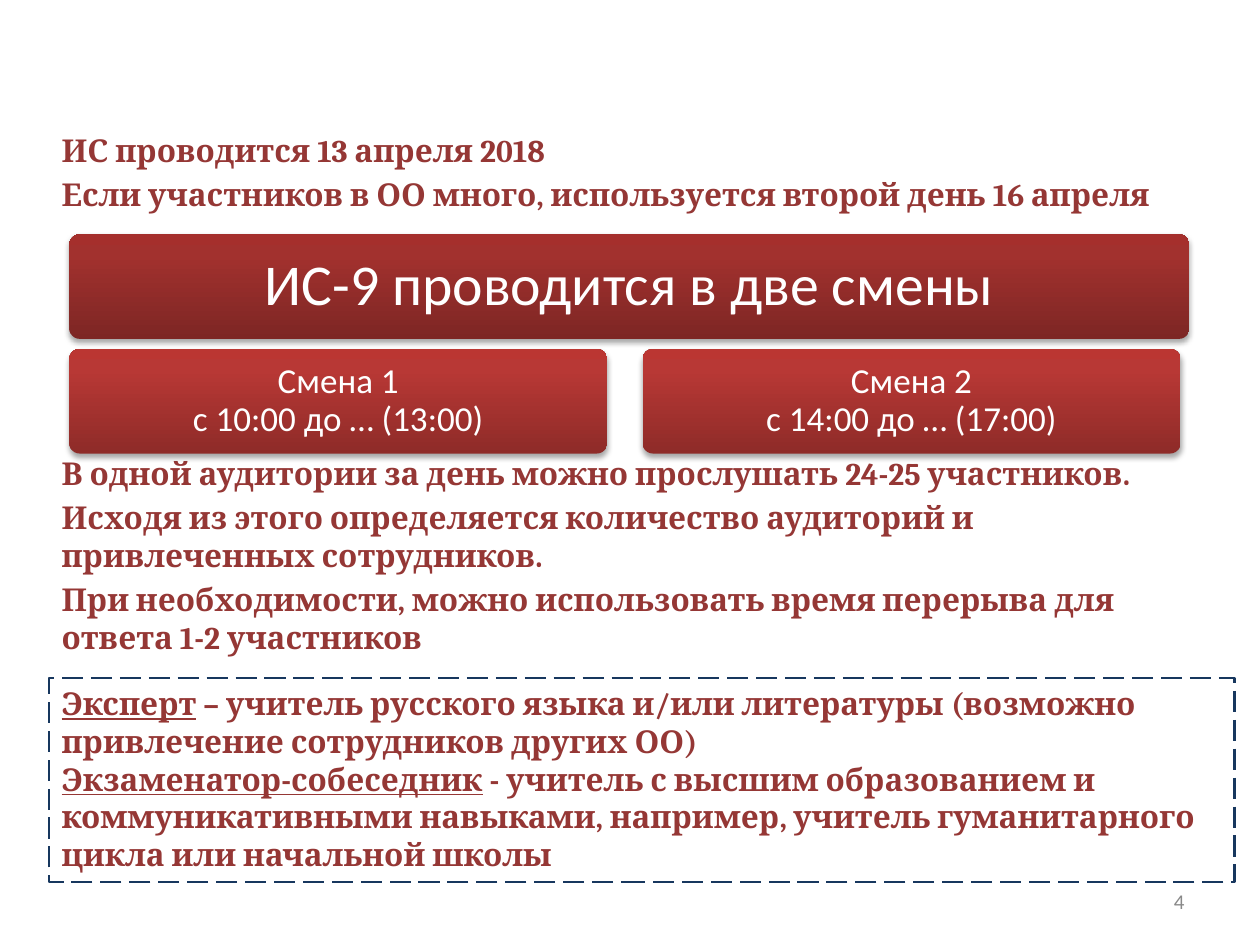
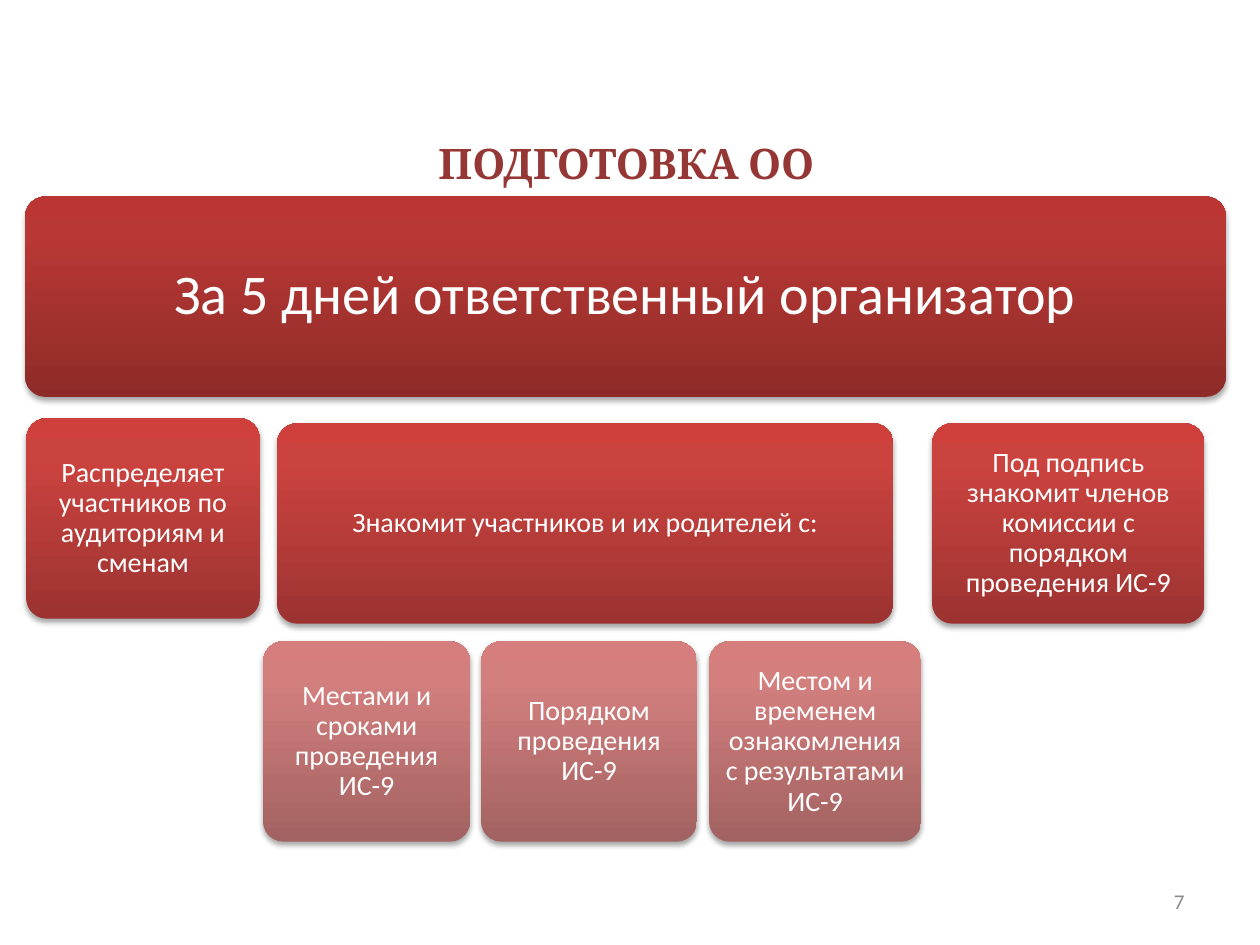
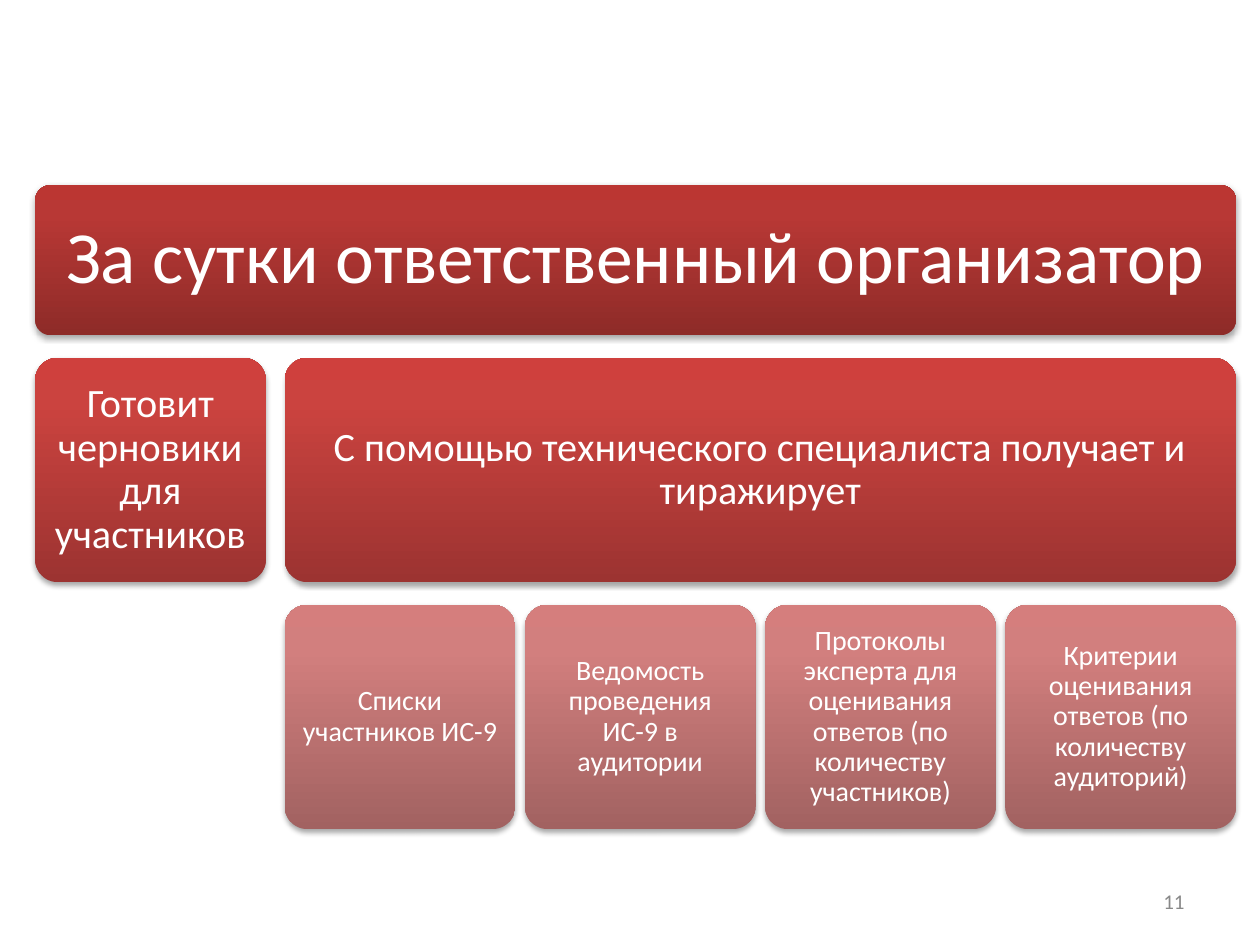
from lxml import etree
from pptx import Presentation
from pptx.dml.color import RGBColor
from pptx.enum.dml import MSO_LINE
from pptx.enum.shapes import MSO_SHAPE
from pptx.enum.text import MSO_ANCHOR, PP_ALIGN
from pptx.oxml import parse_xml
from pptx.oxml.ns import nsdecls
from pptx.util import Inches, Pt

COLORS = {
    "heading": "953735",
    "number": "898989",
    "white": "FFFFFF",
    "frame": "17375E",
}
# Gradient stops from bottom to top of a block: 0, 80 and 100 %
GRADIENTS = {
    "deep": ("7D2624", "A2312E", "A52F2C"),
    "main": ("8E2B28", "B83835", "BB3632"),
    "second": ("9C3331", "CB433F", "CF403D"),
    "pale": ("A26261", "D27F7E", "D57E7D"),
}
HEADING_FONT = "Cambria"
BODY_FONT = "Calibri"


def style(paragraph, font_name, size, color, bold=False, alignment=None):
    paragraph.alignment = alignment
    font = paragraph.font
    font.name = font_name
    font.size = Pt(size)
    font.bold = bold
    font.color.rgb = RGBColor.from_string(COLORS[color])


def add_block(slide, text, left, top, width, height, gradient, size):
    """Rounded block with a vertical gradient, a soft shadow and centred text."""
    shape = slide.shapes.add_shape(
        MSO_SHAPE.ROUNDED_RECTANGLE,
        Inches(left), Inches(top), Inches(width), Inches(height))
    shape.adjustments[0] = 0.1
    shape.line.fill.background()
    stops = "".join(
        f'<a:gs pos="{position}000"><a:srgbClr val="{color}"/></a:gs>'
        for position, color in zip((0, 80, 100), GRADIENTS[gradient]))
    properties = shape._element.spPr
    properties.find("{*}prstGeom").addnext(parse_xml(
        f'<a:gradFill {nsdecls("a")} rotWithShape="1"><a:gsLst>{stops}</a:gsLst>'
        '<a:lin ang="16200000" scaled="0"/></a:gradFill>'))
    shape.shadow.inherit = False
    properties.find("{*}effectLst").append(parse_xml(
        f'<a:outerShdw {nsdecls("a")} blurRad="40000" dist="23000" dir="5400000" '
        'rotWithShape="0"><a:srgbClr val="000000"><a:alpha val="35000"/>'
        '</a:srgbClr></a:outerShdw>'))

    frame = shape.text_frame
    frame.word_wrap = True
    frame.vertical_anchor = MSO_ANCHOR.MIDDLE
    # The inset grows with the text size
    frame.margin_left = frame.margin_right = Pt(size * 0.3)
    frame.margin_top = frame.margin_bottom = Pt(size * 0.3)
    paragraph = frame.paragraphs[0]
    paragraph.text = text
    paragraph.line_spacing = 0.9
    style(paragraph, BODY_FONT, size, "white", alignment=PP_ALIGN.CENTER)


presentation = Presentation()
presentation.slide_width = Inches(10)
presentation.slide_height = Inches(7.5)
title_only, blank = presentation.slide_layouts[5], presentation.slide_layouts[6]

# Slides with their numbers
slides = []
for number, layout in ((4, blank), (7, title_only), (11, blank)):
    slide = presentation.slides.add_slide(layout)
    number_box = slide.shapes.add_textbox(
        Inches(7.17), Inches(6.95), Inches(2.33), Inches(0.4))
    number_box.text_frame.word_wrap = True
    number_box.text_frame.vertical_anchor = MSO_ANCHOR.MIDDLE
    paragraph = number_box.text_frame.paragraphs[0]
    paragraph.text = str(number)
    style(paragraph, BODY_FONT, 12, "number", alignment=PP_ALIGN.RIGHT)
    slides.append(slide)
shifts_slide, preparation_slide, day_before_slide = slides

# Slide 1: dates and rooms, with room left between them for the shifts
schedule_box = shifts_slide.shapes.add_textbox(
    Inches(0.39), Inches(0.99), Inches(9.41), Inches(4.33))
schedule_frame = schedule_box.text_frame
schedule_frame.word_wrap = True
schedule = [
    ("ИС проводится 13 апреля 2018", 0),
    ("Если участников в ОО много, используется второй день 16 апреля", 3.6),
    ("В одной аудитории за день можно прослушать 24-25 участников.", 138),
    ("Исходя из этого определяется количество аудиторий и привлеченных сотрудников.", 3.6),
    ("При необходимости, можно использовать время перерыва для ответа 1-2 участников", 3.6),
]
for index, (text, space_before) in enumerate(schedule):
    paragraph = schedule_frame.add_paragraph() if index else schedule_frame.paragraphs[0]
    paragraph.text = text
    paragraph.space_before = Pt(space_before)
    style(paragraph, HEADING_FONT, 18, "heading", bold=True)

# Slide 1: shifts
add_block(shifts_slide, "ИС-9 проводится в две смены", 0.55, 1.86, 8.89, 0.83, "deep", 33)
for left, text in ((0.55, "Смена 1\vс 10:00 до … (13:00)"),
                   (5.1, "Смена 2\vс 14:00 до … (17:00)")):
    add_block(shifts_slide, text, left, 2.77, 4.27, 0.83, "main", 20)

# Slide 1: framed roles
roles_frame = shifts_slide.shapes.add_shape(
    MSO_SHAPE.RECTANGLE, Inches(0.39), Inches(5.38), Inches(9.41), Inches(1.62))
roles_frame.shadow.inherit = False
roles_frame.fill.solid()
roles_frame.fill.fore_color.rgb = RGBColor.from_string(COLORS["white"])
roles_frame.line.color.rgb = RGBColor.from_string(COLORS["frame"])
roles_frame.line.width = Pt(1.5)
roles_frame.line.dash_style = MSO_LINE.LONG_DASH
roles_text = roles_frame.text_frame
roles_text.word_wrap = True
roles_text.vertical_anchor = MSO_ANCHOR.TOP
roles = [
    ("Эксперт", " – учитель русского языка и/или литературы (возможно "
     "привлечение сотрудников других ОО)"),
    ("Экзаменатор-собеседник", " - учитель с высшим образованием и коммуникативными "
     "навыками, например, учитель гуманитарного цикла или начальной школы"),
]
for index, (role, description) in enumerate(roles):
    paragraph = roles_text.add_paragraph() if index else roles_text.paragraphs[0]
    style(paragraph, HEADING_FONT, 18, "heading", bold=True, alignment=PP_ALIGN.LEFT)
    for text, underlined in ((role, True), (description, False)):
        run = paragraph.add_run()
        run.text = text
        run.font.underline = underlined
        run.font.color.rgb = RGBColor.from_string(COLORS["heading"])

# Slide 2: title
title = preparation_slide.shapes.title
title.left, title.top = Inches(0.47), Inches(1.02)
title.width, title.height = Inches(9), Inches(0.55)
title.text_frame.vertical_anchor = MSO_ANCHOR.MIDDLE
paragraph = title.text_frame.paragraphs[0]
paragraph.text = "ПОДГОТОВКА ОО"
style(paragraph, HEADING_FONT, 24, "heading", bold=True, alignment=PP_ALIGN.CENTER)

# Slide 2: duties five days ahead
preparation_blocks = [
    ("За 5 дней ответственный организатор", 0.2, 1.56, 9.53, "main", 32),
    ("Распределяет участников по аудиториям и сменам", 0.21, 3.32, 1.85, "second", 16),
    ("Знакомит участников и их родителей с:", 2.2, 3.36, 4.89, "second", 16),
    ("Местами и сроками проведения ИС-9", 2.09, 5.09, 1.64, "pale", 16),
    ("Порядком проведения ИС-9", 3.82, 5.09, 1.71, "pale", 16),
    ("Местом и временем ознакомления с результатами ИС-9", 5.63, 5.09, 1.68, "pale", 16),
    ("Под подпись знакомит членов комиссии с порядком проведения ИС-9",
     7.4, 3.36, 2.16, "second", 16),
]
for text, left, top, width, gradient, size in preparation_blocks:
    add_block(preparation_slide, text, left, top, width, 1.59, gradient, size)

# Slide 3: duties one day ahead
add_block(day_before_slide, "За сутки ответственный организатор",
          0.28, 1.47, 9.53, 1.19, "main", 42)
add_block(day_before_slide, "Готовит черновики для участников",
          0.28, 2.84, 1.83, 1.78, "second", 23)
add_block(day_before_slide, "С помощью технического специалиста получает и тиражирует",
          2.26, 2.84, 7.55, 1.78, "second", 23)

# Slide 3: documents spread evenly under the wide block
documents = [
    "Списки участников ИС-9",
    "Ведомость проведения ИС-9 в аудитории",
    "Протоколы эксперта для оценивания ответов (по количеству участников)",
    "Критерии оценивания ответов (по количеству аудиторий)",
]
document_step = (7.55 - 1.83) / (len(documents) - 1)
for index, text in enumerate(documents):
    add_block(day_before_slide, text, 2.26 + index * document_step, 4.8, 1.83, 1.78, "pale", 16)

presentation.save("out.pptx")
